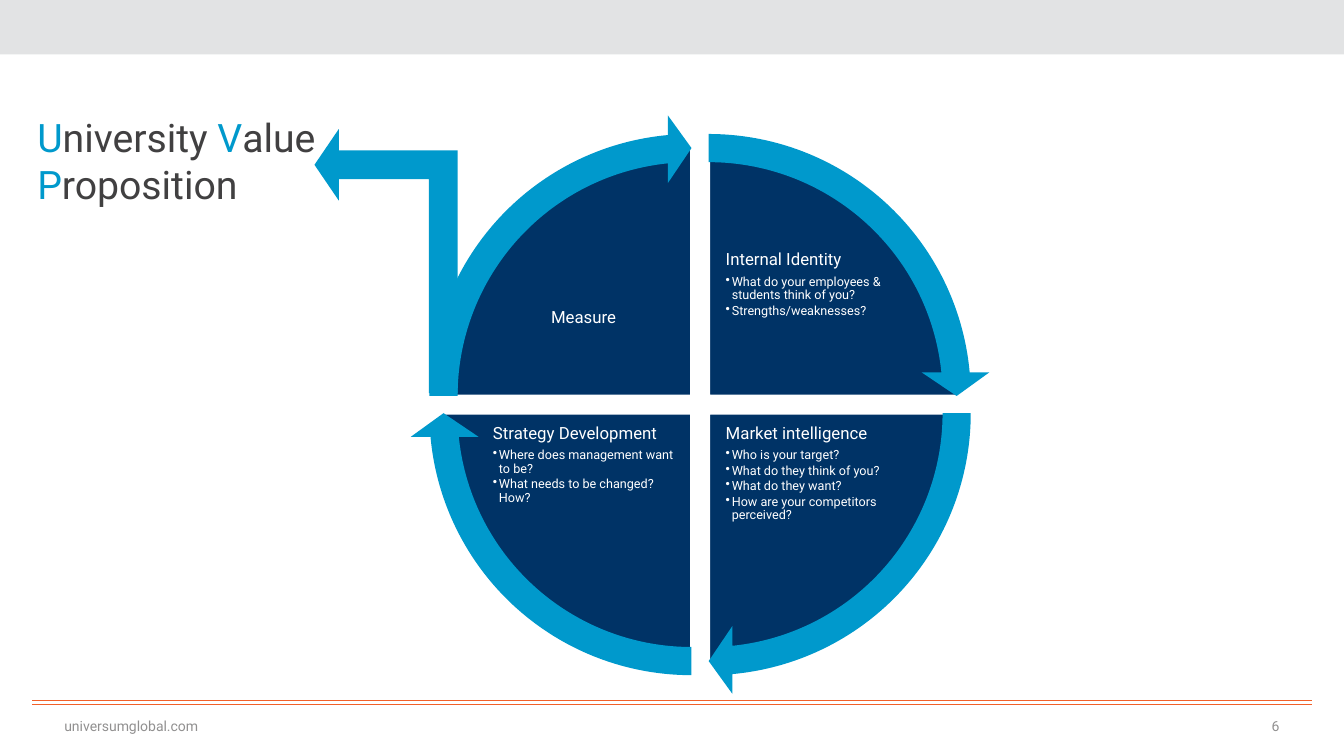
from dataclasses import dataclass

import lxml.etree
import pptx
import pptx.dml.color
import pptx.enum.shapes
import pptx.enum.text
import pptx.oxml.ns
import pptx.util

Shapes = pptx.enum.shapes.MSO_SHAPE
Align = pptx.enum.text.PP_ALIGN
Anchor = pptx.enum.text.MSO_ANCHOR

FONT = "Roboto"
BLUE, NAVY, WHITE = "0099CC", "003366", "FFFFFF"
DARK_GREY, GREY, BAND, ORANGE = "414041", "919090", "E2E3E4", "F1612A"

# Square grid: 100 columns across the slide, 56.25 rows down
COLUMNS = 100
SLIDE_WIDTH, SLIDE_HEIGHT = pptx.util.Inches(13.33), pptx.util.Inches(7.5)

# Wheel, in grid cells
CENTER_X, CENTER_Y = 52.09, 30.11
QUARTER_SHIFT = 0.64
PIE_SIZE, ARROW_SIZE = 37.35, 41.93
TEXT_WIDTH, TEXT_HEIGHT = 13.8, 10.2
TEXT_SHIFT_X, TEXT_SHIFT_Y = 8.66, 6.45
QUARTER_TURN = 54  # 90 degrees in adjustment units


@dataclass
class Box:
    left: float
    top: float
    width: float
    height: float

    def lengths(self) -> tuple[int, ...]:
        return tuple(cells(value) for value in
                     (self.left, self.top, self.width, self.height))


@dataclass
class Quarter:
    heading: str
    bullets: list[str]
    side_x: int  # -1 left, 1 right
    side_y: int  # -1 upper, 1 lower
    start: int   # start angle in adjustment units


# Clockwise from the upper right
QUARTERS = [
    Quarter("Internal Identity",
            ["What do your employees & students think of you?",
             "Strengths/weaknesses?"], 1, -1, 3 * QUARTER_TURN),
    Quarter("Market intelligence",
            ["Who is your target?", "What do they think of you?",
             "What do they want?", "How are your competitors perceived?"],
            1, 1, 0),
    Quarter("Strategy Development",
            ["Where does management want to be?",
             "What needs to be changed? How?"], -1, 1, QUARTER_TURN),
    Quarter("Measure", [], -1, -1, 2 * QUARTER_TURN),
]

TITLE_RUNS = [("U", BLUE), ("niversity ", DARK_GREY), ("V", BLUE),
              ("alue ", DARK_GREY), ("P", BLUE), ("roposition", DARK_GREY)]


def cells(count: float) -> int:
    return round(count * SLIDE_WIDTH / COLUMNS)


def color(value: str) -> pptx.dml.color.RGBColor:
    return pptx.dml.color.RGBColor.from_string(value)


def centered(x: float, y: float, width: float, height: float) -> Box:
    return Box(x - width / 2, y - height / 2, width, height)


def set_font(font, size: float, fill: str | None = None) -> None:
    font.name = FONT
    font.size = pptx.util.Pt(size)
    if fill:
        font.color.rgb = color(fill)


def add_filled(slide, kind, box: Box, fill: str, adjustments=(), outline=None):
    shape = slide.shapes.add_shape(kind, *box.lengths())
    shape.shadow.inherit = False
    shape.fill.solid()
    shape.fill.fore_color.rgb = color(fill)
    if outline:
        shape.line.color.rgb = color(outline)
        shape.line.width = pptx.util.Pt(2)
    else:
        shape.line.fill.background()
    for index, value in enumerate(adjustments):
        shape.adjustments[index] = value
    return shape


def add_text_frame(slide, box: Box, anchor=Anchor.TOP):
    frame = slide.shapes.add_textbox(*box.lengths()).text_frame
    frame.word_wrap = True
    frame.vertical_anchor = anchor
    return frame


def add_footer_text(slide, box: Box, text: str, alignment) -> None:
    paragraph = add_text_frame(slide, box, Anchor.MIDDLE).paragraphs[0]
    paragraph.text = text
    paragraph.alignment = alignment
    set_font(paragraph.font, 10, GREY)


def add_rule(slide, row: float) -> None:
    line = slide.shapes.add_connector(
        pptx.enum.shapes.MSO_CONNECTOR.STRAIGHT,
        cells(2.4), cells(row), cells(97.6), cells(row))
    line.line.color.rgb = color(ORANGE)
    line.line.width = pptx.util.Pt(0.25)
    lxml.etree.SubElement(line._element.spPr, pptx.oxml.ns.qn("a:effectLst"))


def add_bullet(paragraph) -> None:
    paragraph.level = 1
    properties = paragraph._p.get_or_add_pPr()
    indent = pptx.util.Inches(0.06)
    properties.set("marL", str(indent))
    properties.set("indent", str(-indent))
    bullet = lxml.etree.SubElement(properties, pptx.oxml.ns.qn("a:buChar"))
    bullet.set("char", "•")


def format_line(paragraph, size: float, space_after: float) -> None:
    paragraph.line_spacing = 0.9
    paragraph.space_after = pptx.util.Pt(space_after)
    set_font(paragraph.font, size, WHITE)


def add_quarter(slide, quarter: Quarter) -> None:
    x = CENTER_X + quarter.side_x * QUARTER_SHIFT
    y = CENTER_Y + quarter.side_y * QUARTER_SHIFT
    end = (quarter.start + QUARTER_TURN) % (4 * QUARTER_TURN)
    add_filled(slide, Shapes.PIE, centered(x, y, PIE_SIZE, PIE_SIZE), NAVY,
               (quarter.start, end), WHITE)

    frame = add_text_frame(slide, centered(
        CENTER_X + quarter.side_x * TEXT_SHIFT_X,
        CENTER_Y + quarter.side_y * TEXT_SHIFT_Y, TEXT_WIDTH, TEXT_HEIGHT))
    frame.margin_left = frame.margin_right = pptx.util.Inches(0.02)
    frame.margin_top = frame.margin_bottom = pptx.util.Inches(0.02)
    heading = frame.paragraphs[0]
    heading.text = quarter.heading
    format_line(heading, 12, 4.2)
    if not quarter.bullets:
        frame.vertical_anchor = Anchor.MIDDLE
        heading.alignment = Align.CENTER
    for text in quarter.bullets:
        paragraph = frame.add_paragraph()
        paragraph.text = text
        add_bullet(paragraph)
        format_line(paragraph, 9, 1.35)


def add_cycle_arrow(slide, quarter: Quarter) -> None:
    box = centered(CENTER_X + quarter.side_x * QUARTER_SHIFT,
                   CENTER_Y + quarter.side_y * QUARTER_SHIFT,
                   ARROW_SIZE, ARROW_SIZE)
    add_filled(slide, Shapes.CIRCULAR_ARROW, box, BLUE,
               (0.05, 3.28, quarter.start + 50.72, quarter.start, 0.06))


def add_title(slide) -> None:
    title = slide.shapes.title
    title.left, title.top, title.width, title.height = Box(
        1.95, 9.6, 25.5, 4.65).lengths()
    frame = title.text_frame
    frame.auto_size = pptx.enum.text.MSO_AUTO_SIZE.NONE
    frame.vertical_anchor = Anchor.MIDDLE
    frame.margin_left = frame.margin_right = pptx.util.Inches(0.11)
    paragraph = frame.paragraphs[0]
    paragraph.alignment = Align.LEFT
    set_font(paragraph.font, 28)
    for text, fill in TITLE_RUNS:
        run = paragraph.add_run()
        run.text = text
        run.font.color.rgb = color(fill)


def main() -> None:
    presentation = pptx.Presentation()
    presentation.slide_width = SLIDE_WIDTH
    presentation.slide_height = SLIDE_HEIGHT
    slide = presentation.slides.add_slide(presentation.slide_layouts[5])

    # Header band, title and footer
    add_filled(slide, Shapes.RECTANGLE, Box(0, 0, COLUMNS, 4.05), BAND)
    add_title(slide)
    for row in (52.42, 52.12):
        add_rule(slide, row)
    add_footer_text(slide, Box(76.95, 52.95, 18.98, 2.18), "6", Align.RIGHT)
    add_footer_text(slide, Box(4.05, 52.95, 26.25, 2.18),
                    "universumglobal.com", Align.LEFT)

    # Wheel, with its arrows above the quarters
    for quarter in QUARTERS:
        add_quarter(slide, quarter)
    for quarter in QUARTERS:
        add_cycle_arrow(slide, quarter)

    # Arrow from the wheel to the title
    bent_arrow = add_filled(slide, Shapes.BENT_UP_ARROW,
                            Box(18.9, 14.1, 19.65, 10.65), BLUE,
                            (0.2, 0.25, 0.17))
    bent_arrow.rotation = 270

    presentation.save("out.pptx")


if __name__ == "__main__":
    main()
